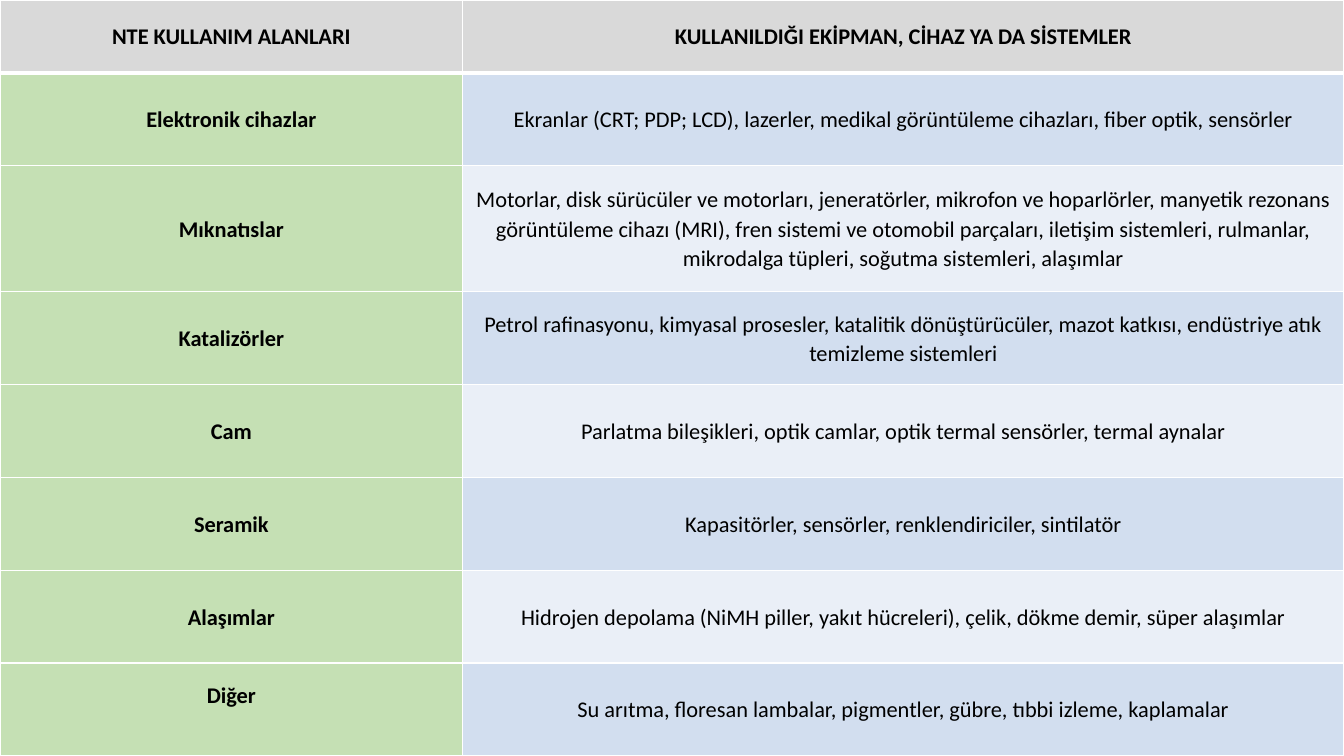
from dataclasses import dataclass

from lxml import etree
from pptx import Presentation, util as u
from pptx.dml.color import RGBColor
from pptx.enum import text
from pptx.oxml.ns import qn


@dataclass(frozen=True)
class Theme:
    """Colours, font and sizes of the slide."""
    font: str = "Calibri"
    size: int = 16
    spacing: float = 1.07
    ink: str = "000000"
    header: str = "D9D9D9"
    area: str = "C5E0B4"
    bands: tuple = ("D2DEEF", "EAEFF7")
    border: str = "FFFFFF"
    thin: int = 1
    thick: int = 3


THEME = Theme()
COLS = (4.59, 8.74)
ROWS = (0.72, 0.92, 1.25, 0.92, 0.92, 0.92, 0.92, 0.92)
LAST_LIFT = 0.29
USES = (
    ("NTE KULLANIM ALANLARI", "KULLANILDIĞI EKİPMAN, CİHAZ YA DA SİSTEMLER"),
    ("Elektronik cihazlar",
     "Ekranlar (CRT; PDP; LCD), lazerler, medikal görüntüleme cihazları, "
     "fiber optik, sensörler"),
    ("Mıknatıslar",
     "Motorlar, disk sürücüler ve motorları, jeneratörler, mikrofon ve "
     "hoparlörler, manyetik rezonans görüntüleme cihazı (MRI), fren sistemi "
     "ve otomobil parçaları, iletişim sistemleri, rulmanlar, mikrodalga "
     "tüpleri, soğutma sistemleri, alaşımlar"),
    ("Katalizörler",
     "Petrol rafinasyonu, kimyasal prosesler, katalitik dönüştürücüler, "
     "mazot katkısı, endüstriye atık temizleme sistemleri"),
    ("Cam",
     "Parlatma bileşikleri, optik camlar, optik termal sensörler, "
     "termal aynalar"),
    ("Seramik", "Kapasitörler, sensörler, renklendiriciler, sintilatör"),
    ("Alaşımlar",
     "Hidrojen depolama (NiMH piller, yakıt hücreleri), çelik, dökme demir, "
     "süper alaşımlar"),
    ("Diğer",
     "Su arıtma, floresan lambalar, pigmentler, gübre, tıbbi izleme, "
     "kaplamalar"),
)


def add_text(tf, words, bold=False, size=THEME.size, color=THEME.ink):
    """Write one centred paragraph into a text frame."""
    p = tf.paragraphs[0]
    p.alignment = text.PP_ALIGN.CENTER
    p.line_spacing = THEME.spacing
    r = p.add_run()
    r.text = words
    r.font.name, r.font.size, r.font.bold = THEME.font, u.Pt(size), bold
    r.font.color.rgb = RGBColor.from_string(color)


def set_borders(cell, **widths):
    """Draw the cell's sides (L, R, T, B) at the given point widths."""
    props = cell._tc.get_or_add_tcPr()
    for side, width in widths.items():
        ln = etree.SubElement(props, qn(f"a:ln{side}"), w=str(u.Pt(width)))
        fill = etree.SubElement(ln, qn("a:solidFill"))
        etree.SubElement(fill, qn("a:srgbClr"), val=THEME.border)


def cell_fill(row, col):
    """Return the fill colour for a table position."""
    if row == 0:
        return THEME.header
    return THEME.area if col == 0 else THEME.bands[(row - 1) % 2]


def format_cell(cell, row, col):
    """Set borders, fill, margins and anchor of one cell."""
    set_borders(cell, L=THEME.thin, R=THEME.thin,
                T=THEME.thick if row == 1 else THEME.thin,
                B=THEME.thick if row == 0 else THEME.thin)
    cell.fill.solid()
    cell.fill.fore_color.rgb = RGBColor.from_string(cell_fill(row, col))
    cell.margin_left = cell.margin_right = u.Inches(0.06)
    cell.margin_top = cell.margin_bottom = 0
    cell.vertical_anchor = text.MSO_ANCHOR.MIDDLE


def add_uses_table(s, left, top, width, height):
    """Fill the given box with the table of uses."""
    table = s.shapes.add_table(len(ROWS), len(COLS), left, top, width, height).table
    for column, share in zip(table.columns, COLS):
        column.width = int(width * share / sum(COLS))
    for row, share in zip(table.rows, ROWS):
        row.height = int(height * share / sum(ROWS))
    for i, entry in enumerate(USES):
        for j, words in enumerate(entry):
            cell = table.cell(i, j)
            format_cell(cell, i, j)
            add_text(cell.text_frame, words, bold=i == 0 or j == 0)
    table.cell(len(ROWS) - 1, 0).margin_bottom = u.Inches(LAST_LIFT)


def main():
    """Build and save the one-slide presentation."""
    prs = Presentation()
    prs.slide_width, prs.slide_height = u.Inches(13.33), u.Inches(7.5)
    s = prs.slides.add_slide(prs.slide_layouts[6])
    add_uses_table(s, 0, 0, prs.slide_width, prs.slide_height)
    prs.save("out.pptx")


if __name__ == "__main__":
    main()
